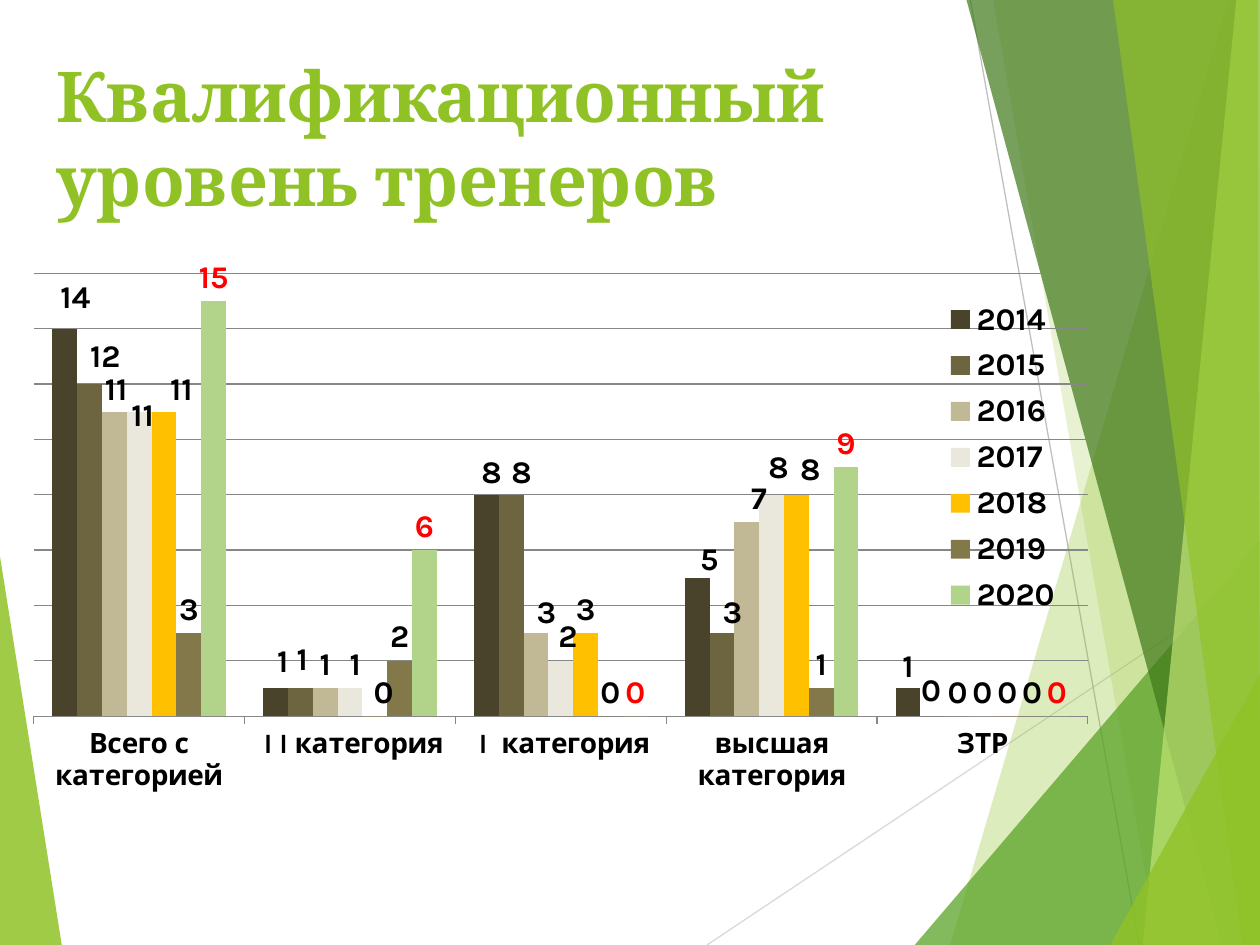
from dataclasses import dataclass

from lxml.etree import SubElement
from pptx import Presentation
from pptx.chart.data import CategoryChartData
from pptx.dml.color import RGBColor
from pptx.enum.chart import (XL_CHART_TYPE, XL_LABEL_POSITION, XL_LEGEND_POSITION,
                             XL_TICK_LABEL_POSITION, XL_TICK_MARK)
from pptx.enum.shapes import MSO_CONNECTOR
from pptx.enum.text import MSO_ANCHOR, MSO_AUTO_SIZE, PP_ALIGN
from pptx.oxml import parse_xml
from pptx.oxml.ns import nsdecls, qn
from pptx.util import Pt


@dataclass(frozen=True)
class Theme:
    title_font: str = "Cambria"
    chart_font: str = "Karla"
    title_size: int = 40
    label_size: int = 18
    axis_size: int = 16
    accent: str = "90C226"
    text: str = "000000"
    highlight: str = "FF0000"
    grid: str = "878787"


THEME = Theme()
WIDTH, HEIGHT = 720, 540

# Straight background lines: start, end, colour
RAYS = [
    ((404, 540), (720, 329), "D9D9D9"),
    ((554.5, 0), (651, 540), "BFBFBF"),
]

# Background facets: corners, colour, opacity in percent
FACETS = [
    ([(0, 318), (35.3, 540), (0, 540)], "90C226", 85),
    ([(702, 0), (543, 540), (720, 540), (720, 0)], "90C226", 30),
    ([(567.5, 0), (661.5, 540), (720, 540), (720, 0)], "90C226", 20),
    ([(522.7, 540), (720, 309), (720, 540)], "54A021", 72),
    ([(552.3, 0), (698.5, 540), (720, 540), (720, 0)], "3F7819", 70),
    ([(706.5, 0), (653, 540), (720, 540), (720, 0)], "C0E474", 70),
    ([(636, 0), (710, 540), (720, 540), (718.8, 0)], "90C226", 65),
    ([(634.5, 540), (720, 385), (720, 540)], "90C226", 80),
]

CATEGORIES = ["Всего с категорией", " I I категория", " I  категория",
              " высшая  категория", "ЗТР"]

# Year, values, bar colour, label shifts {category: (right, down)} in points
SERIES = [
    ("2014", (14, 1, 8, 5, 1), "48432A",
     {0: (6, -4), 1: (4, -2), 2: (3, 1), 3: (7, 3), 4: (0, 1)}),
    ("2015", (12, 1, 8, 3, 0), "6D6540",
     {0: (9, -2), 1: (1, -3), 2: (6, 1), 3: (6, 2), 4: (-1, -1)}),
    ("2016", (11, 1, 3, 7, 0), "C1B995", {0: (1, 1), 2: (6, 2), 3: (7, 0)}),
    ("2017", (11, 1, 2, 8, 0), "EAE8DC",
     {0: (2, 16), 1: (3, 0), 2: (4, 0), 3: (4, -2)}),
    ("2018", (11, 0, 3, 8, 0), "FFC000", {0: (10, 1), 1: (5, 0), 3: (8, -1)}),
    ("2019", (3, 2, 0, 1, 0), "83784A", {}),
    ("2020", (15, 6, 0, 9, 0), "B1D38A", {}),
]
CHART_BOX = (-26, 145.5, 648, 356.5)


def rgb(value):
    return RGBColor.from_string(value)


def style_font(font, name, size, color):
    font.name = name
    font.size = Pt(size)
    font.bold = True
    font.color.rgb = rgb(color)


def add_title(slide, text):
    sp = slide.shapes.title
    sp.left, sp.top, sp.width, sp.height = Pt(25), Pt(26), Pt(500), Pt(104)
    tf = sp.text_frame
    tf.word_wrap = True
    tf.auto_size = MSO_AUTO_SIZE.NONE
    tf.vertical_anchor = MSO_ANCHOR.MIDDLE
    p = tf.paragraphs[0]
    p.alignment = PP_ALIGN.LEFT
    r = p.add_run()
    r.text = text
    style_font(r.font, THEME.title_font, THEME.title_size, THEME.accent)


def add_ray(slide, start, end, color):
    line = slide.shapes.add_connector(
        MSO_CONNECTOR.STRAIGHT, *(Pt(v) for v in start + end))
    line.line.color.rgb = rgb(color)
    line.line.width = Pt(0.75)
    SubElement(line._element.spPr, qn("a:effectLst"))


def add_facet(slide, corners, color, opacity):
    first, *rest = [(Pt(x), Pt(y)) for x, y in corners]
    builder = slide.shapes.build_freeform(*first)
    builder.add_line_segments(rest, close=True)
    sp = builder.convert_to_shape()
    sp.shadow.inherit = False
    sp.line.fill.background()
    sp.fill.solid()
    sp.fill.fore_color.rgb = rgb(color)
    fill = sp._element.spPr.find(qn("a:solidFill"))
    SubElement(fill[0], qn("a:alpha"), val=str(opacity * 1000))


def manual_layout(x, y, w=None, h=None, inner=False):
    """Return a c:layout in fractions of the chart; without a size it is a shift."""
    parts = []
    if inner:
        parts.append(("layoutTarget", "inner"))
    if w is not None:
        parts += [("xMode", "edge"), ("yMode", "edge")]
    parts += [("x", x), ("y", y)]
    if w is not None:
        parts += [("w", w), ("h", h)]
    body = "".join(f'<c:{tag} val="{value}"/>' for tag, value in parts)
    return parse_xml(f"<c:layout {nsdecls('c')}><c:manualLayout>{body}"
                     "</c:manualLayout></c:layout>")


def place(parent, layout, before):
    """Put the layout in the parent, ahead of the named child."""
    for old in parent.findall(qn("c:layout")):
        parent.remove(old)
    parent.find(qn(before)).addprevious(layout)


def style_series(series, color, shifts, label_color):
    series.invert_if_negative = False
    series.format.fill.solid()
    series.format.fill.fore_color.rgb = rgb(color)
    labels = series.data_labels
    labels.show_value = True
    labels.position = XL_LABEL_POSITION.OUTSIDE_END
    style_font(labels.font, THEME.chart_font, THEME.label_size, label_color)
    for index in shifts:
        label = series.points[index].data_label
        label.position = XL_LABEL_POSITION.OUTSIDE_END
        style_font(label.font, THEME.chart_font, THEME.label_size, label_color)
    for item in series._element.iter(qn("c:dLbl")):
        right, down = shifts[int(item.find(qn("c:idx")).get("val"))]
        item[0].addnext(manual_layout(right / CHART_BOX[2], down / CHART_BOX[3]))


def style_axes(chart):
    axis = chart.category_axis
    axis.major_tick_mark = XL_TICK_MARK.OUTSIDE
    axis.tick_label_position = XL_TICK_LABEL_POSITION.LOW
    axis.format.line.color.rgb = rgb(THEME.grid)
    style_font(axis.tick_labels.font, THEME.chart_font, THEME.axis_size, THEME.text)
    scale = chart.value_axis
    scale.visible = False
    scale.minimum_scale, scale.maximum_scale, scale.major_unit = 0, 16, 2
    scale.has_major_gridlines = True
    scale.major_gridlines.format.line.color.rgb = rgb(THEME.grid)


def add_category_chart(slide):
    data = CategoryChartData()
    data.categories = CATEGORIES
    for year, values, _, _ in SERIES:
        data.add_series(year, values)
    chart = slide.shapes.add_chart(XL_CHART_TYPE.COLUMN_CLUSTERED,
                                   *(Pt(v) for v in CHART_BOX), data).chart
    chart.has_title = False
    style_font(chart.font, THEME.chart_font, THEME.label_size, THEME.text)
    plot = chart.plots[0]
    plot.gap_width, plot.overlap = 150, 0
    plot.vary_by_categories = False
    for series, (year, _, color, shifts) in zip(plot.series, SERIES):
        label_color = THEME.highlight if year == "2020" else THEME.text
        style_series(series, color, shifts, label_color)
    style_axes(chart)
    chart.has_legend = True
    legend = chart.legend
    legend.position = XL_LEGEND_POSITION.RIGHT
    legend.include_in_layout = False
    style_font(legend.font, THEME.chart_font, THEME.label_size, THEME.text)
    place(legend._element, manual_layout(0.87, 0.06, 0.11, 0.53), "c:overlay")
    place(chart._chartSpace.chart.plotArea,
          manual_layout(0.07, 0.03, 0.93, 0.71, inner=True), "c:barChart")


def main():
    prs = Presentation()
    prs.slide_width, prs.slide_height = Pt(WIDTH), Pt(HEIGHT)
    slide = prs.slides.add_slide(prs.slide_layouts[5])
    for ray in RAYS:
        add_ray(slide, *ray)
    for facet in FACETS:
        add_facet(slide, *facet)
    add_title(slide, "Квалификационный уровень тренеров")
    add_category_chart(slide)
    prs.save("out.pptx")


if __name__ == "__main__":
    main()
